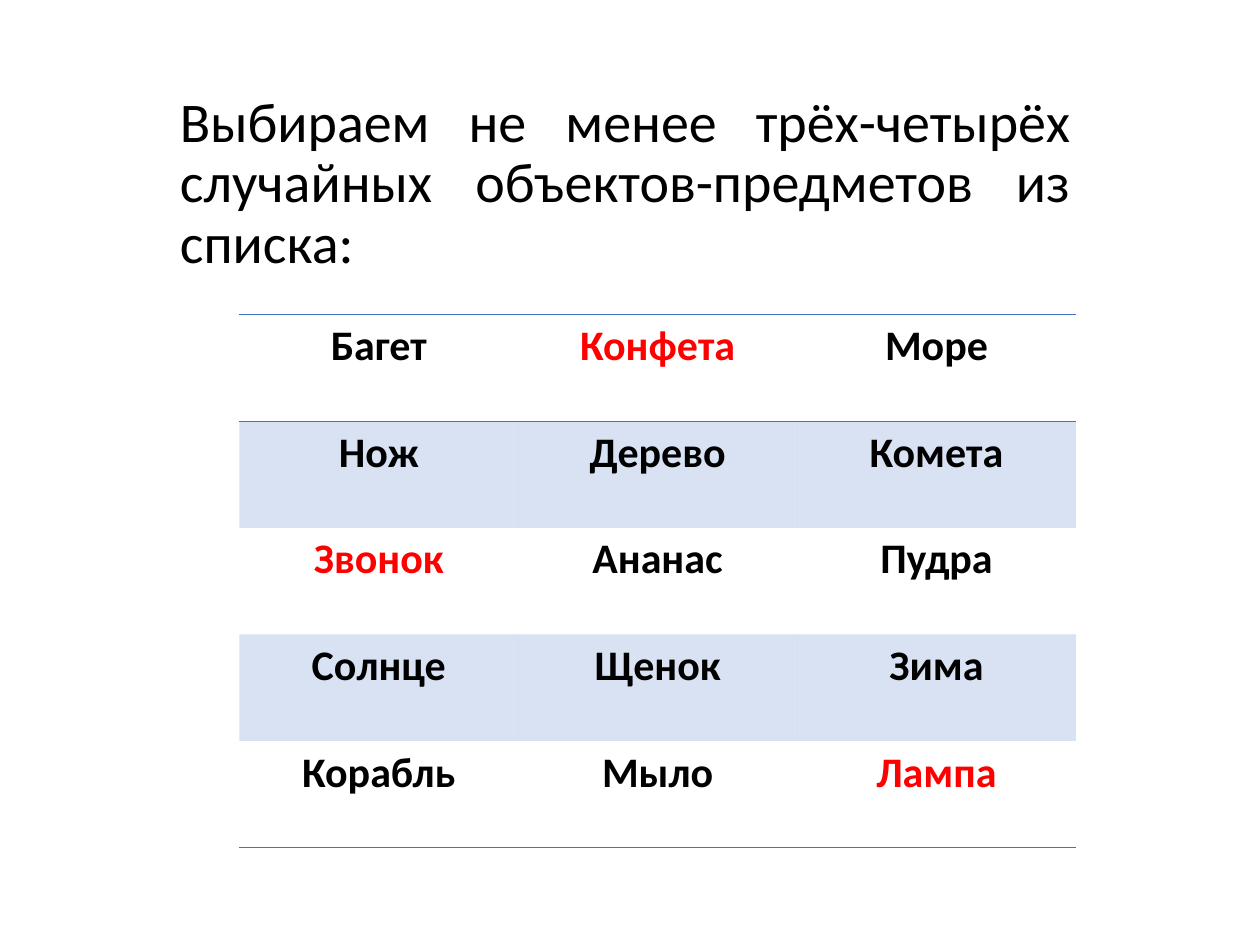
from dataclasses import dataclass

from lxml import etree
from pptx import Presentation
from pptx import util as u
from pptx.dml.color import RGBColor
from pptx.enum import text
from pptx.oxml import ns

BLACK = RGBColor(0x00, 0x00, 0x00)
RED = RGBColor(0xFF, 0x00, 0x00)
BLUE = RGBColor(0x44, 0x72, 0xC4)

SLIDE_WIDTH, SLIDE_HEIGHT = u.Inches(10), u.Inches(7.5)
BAND_OPACITY = 20
RULE_WIDTH = u.Pt(1)

TASK = "Выбираем не менее трёх-четырёх случайных объектов-предметов из списка:"
WORDS = (
    ("Багет", "Конфета", "Море"),
    ("Нож", "Дерево", "Комета"),
    ("Звонок", "Ананас", "Пудра"),
    ("Солнце", "Щенок", "Зима"),
    ("Корабль", "Мыло", "Лампа"),
)
CHOSEN = {"Конфета", "Звонок", "Лампа"}
RULED_EDGES = {0, 1, len(WORDS)}


@dataclass(frozen=True)
class Area:
    """Place on the slide, in shares of its width and height."""
    left: float
    top: float
    width: float
    height: float

    def lengths(self) -> tuple[int, int, int, int]:
        return (int(self.left * SLIDE_WIDTH), int(self.top * SLIDE_HEIGHT),
                int(self.width * SLIDE_WIDTH), int(self.height * SLIDE_HEIGHT))


TASK_AREA = Area(0.133, 0.099, 0.727, 0.193)
WORDS_AREA = Area(0.19, 0.333, 0.664, 0.564)


def write(paragraph, wording: str, alignment, size: int, color: RGBColor, bold: bool) -> None:
    paragraph.alignment = alignment
    run = paragraph.add_run()
    run.text = wording
    run.font.color.rgb = color
    for name, value in {"name": "Calibri", "size": u.Pt(size), "bold": bold}.items():
        setattr(run.font, name, value)


def shade(cell) -> None:
    cell.fill.solid()
    cell.fill.fore_color.rgb = BLUE
    color = cell._tc.tcPr.find(".//" + ns.qn("a:srgbClr"))
    etree.SubElement(color, ns.qn("a:alpha"), val=str(BAND_OPACITY * 1000))


def set_borders(cell, ruled: dict[str, bool]) -> None:
    """Draw the ruled sides and clear the others; borders precede the fill."""
    properties = cell._tc.get_or_add_tcPr()
    for position, (side, is_ruled) in enumerate(ruled.items()):
        line = etree.Element(ns.qn(f"a:ln{side}"), w=str(int(RULE_WIDTH)))
        if is_ruled:
            fill = etree.SubElement(line, ns.qn("a:solidFill"))
            etree.SubElement(fill, ns.qn("a:srgbClr"), val=str(BLUE))
        else:
            etree.SubElement(line, ns.qn("a:noFill"))
        properties.insert(position, line)


def add_task(slide) -> None:
    frame = slide.shapes.add_textbox(*TASK_AREA.lengths()).text_frame
    frame.word_wrap = True
    frame.vertical_anchor = text.MSO_ANCHOR.MIDDLE
    paragraph = frame.paragraphs[0]
    paragraph.line_spacing = 0.9
    write(paragraph, TASK, text.PP_ALIGN.JUSTIFY, 32, BLACK, False)


def add_words(slide) -> None:
    table = slide.shapes.add_table(len(WORDS), len(WORDS[0]), *WORDS_AREA.lengths()).table
    table.first_row = table.horz_banding = False
    for row, words in enumerate(WORDS):
        for column, word in enumerate(words):
            cell = table.cell(row, column)
            write(cell.text_frame.paragraphs[0], word, text.PP_ALIGN.CENTER, 24,
                  RED if word in CHOSEN else BLACK, True)
            if row % 2:
                shade(cell)
            else:
                cell.fill.background()
            set_borders(cell, {"L": False, "R": False,
                               "T": row in RULED_EDGES, "B": row + 1 in RULED_EDGES})


def main() -> None:
    deck = Presentation()
    deck.slide_width, deck.slide_height = SLIDE_WIDTH, SLIDE_HEIGHT
    slide = deck.slides.add_slide(deck.slide_layouts[6])
    add_task(slide)
    add_words(slide)
    deck.save("out.pptx")


if __name__ == "__main__":
    main()
